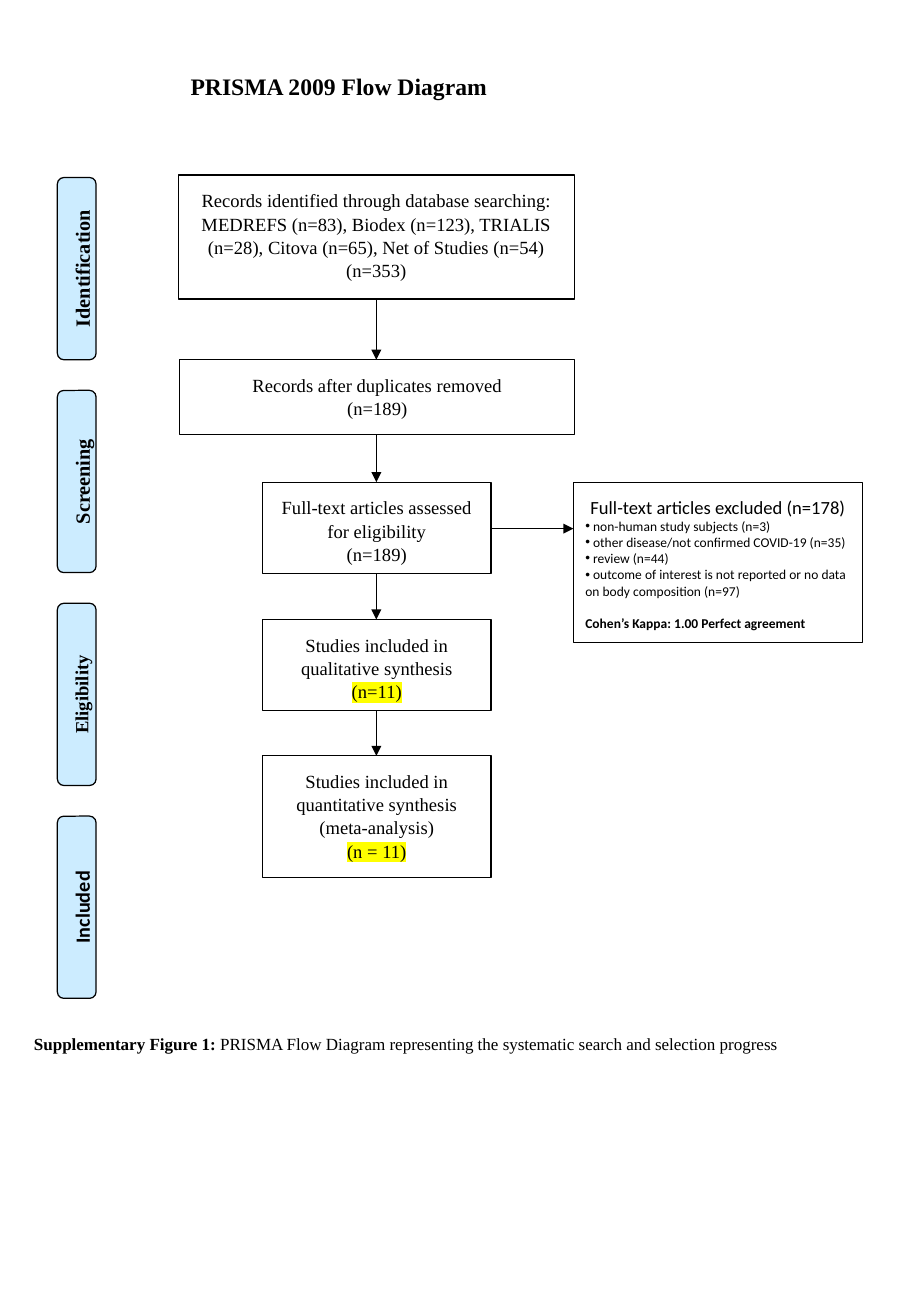
import pptx
import pptx.util
import pptx.dml.color
import pptx.enum.shapes
import pptx.enum.text
import pptx.oxml.ns
import lxml.etree

Cm = pptx.util.Cm
Pt = pptx.util.Pt
SHAPES = pptx.enum.shapes.MSO_SHAPE
ALIGN = pptx.enum.text.PP_ALIGN
qn = pptx.oxml.ns.qn
SERIF = "Times New Roman"
SANS = "Calibri"


def color(hex_string):
    return pptx.dml.color.RGBColor.from_string(hex_string)


def style(para, size, name=SERIF, bold=False, align=ALIGN.CENTER):
    para.alignment = align
    para.font.size = Pt(size)
    para.font.name = name
    para.font.bold = bold
    para.font.color.rgb = color("000000")


deck = pptx.Presentation()
deck.slide_width, deck.slide_height = Cm(19.05), Cm(27.51)
slide = deck.slides.add_slide(deck.slide_layouts[1])
title, excluded = slide.placeholders

# Title
title.left, title.top, title.width, title.height = Cm(3.73), Cm(1.35), Cm(7), Cm(0.9)
title.text_frame.auto_size = pptx.enum.text.MSO_AUTO_SIZE.NONE
title.text_frame.text = "PRISMA 2009 Flow Diagram"
style(title.text_frame.paragraphs[0], 14, bold=True, align=ALIGN.LEFT)

# Phase labels: text, size, font
phases = [
    ("Identification", 12, SERIF),
    ("Screening", 12, SERIF),
    ("Eligibility", 11, SERIF),
    ("Included", 12, SANS),
]
for index, (text, size, name) in enumerate(phases):
    label = slide.shapes.add_shape(
        SHAPES.ROUNDED_RECTANGLE, Cm(-0.3), Cm(5.21 + 4.45 * index), Cm(3.81), Cm(0.81))
    label.rotation = 270
    label.shadow.inherit = False
    label.fill.solid()
    label.fill.fore_color.rgb = color("CCECFF")
    label.line.color.rgb = color("000000")
    label.line.width = Pt(0.75)
    frame = label.text_frame
    frame.vertical_anchor = pptx.enum.text.MSO_ANCHOR.TOP
    frame.margin_left = frame.margin_right = Cm(0.13)
    frame.margin_top, frame.margin_bottom = Cm(0.22), 0
    frame.text = text
    style(frame.paragraphs[0], size, name, bold=True)

# Main flow: left, top, width, height, text, count, highlighted
stages = [
    (3.73, 3.66, 8.28, 2.59,
     "Records identified through database searching: MEDREFS (n=83), Biodex (n=123), "
     "TRIALIS (n=28), Citova (n=65), Net of Studies (n=54)", "(n=353)", False),
    (3.76, 7.52, 8.26, 1.57, "Records after duplicates removed", "(n=189)", False),
    (5.49, 10.08, 4.78, 1.91, "Full-text articles assessed for eligibility", "(n=189)", False),
    (5.49, 12.95, 4.78, 1.91, "Studies included in qualitative synthesis", "(n=11)", True),
    (5.49, 15.8, 4.78, 2.54,
     "Studies included in quantitative synthesis (meta-analysis)", "(n = 11)", True),
]
for left, top, width, height, text, count, highlighted in stages:
    box = slide.shapes.add_shape(SHAPES.RECTANGLE, Cm(left), Cm(top), Cm(width), Cm(height))
    box.shadow.inherit = False
    box.fill.solid()
    box.fill.fore_color.rgb = color("FFFFFF")
    box.line.color.rgb = color("000000")
    box.line.width = Pt(0.75)
    frame = box.text_frame
    frame.vertical_anchor = pptx.enum.text.MSO_ANCHOR.TOP
    frame.margin_left = frame.margin_right = frame.margin_bottom = Cm(0.25)
    frame.margin_top = Cm(0.28)
    para = frame.paragraphs[0]
    style(para, 11)
    para.line_spacing = 1.04
    para.add_run().text = text
    para.add_line_break()
    span = para.add_run()
    span.text = count
    if highlighted:
        highlight = lxml.etree.SubElement(span.font._element, qn("a:highlight"))
        lxml.etree.SubElement(highlight, qn("a:srgbClr"), val="FFFF00")

# Exclusion box
excluded.left, excluded.top = Cm(11.99), Cm(10.08)
excluded.width, excluded.height = Cm(6.05), Cm(3.35)
excluded.fill.solid()
excluded.fill.fore_color.rgb = color("FFFFFF")
excluded.line.color.rgb = color("000000")
excluded.line.width = Pt(0.75)
frame = excluded.text_frame
frame.auto_size = pptx.enum.text.MSO_AUTO_SIZE.NONE
frame.margin_left = frame.margin_right = frame.margin_bottom = Cm(0.25)
frame.margin_top = Cm(0.28)
reasons = [
    "Full-text articles excluded (n=178)",
    " non-human study subjects (n=3)",
    " other disease/not confirmed COVID-19 (n=35)",
    " review (n=44)",
    " outcome of interest is not reported or no data on body composition (n=97)",
    "Cohen’s Kappa: 1.00 Perfect agreement",
]
frame.text = "\n".join(reasons)
last = len(reasons) - 1
for index, para in enumerate(frame.paragraphs):
    heading, agreement = index == 0, index == last
    style(para, 11 if heading else 8, SANS, bold=agreement,
          align=ALIGN.CENTER if heading else ALIGN.LEFT)
    para.space_before = Pt(9.8 if agreement else 0)
    properties = para._p.get_or_add_pPr()
    properties.set("marL", "0")
    properties.set("indent", "0")
    if heading or agreement:
        bullet = lxml.etree.Element(qn("a:buNone"))
    else:
        bullet = lxml.etree.Element(qn("a:buChar"), char="•")
    properties.find(qn("a:defRPr")).addprevious(bullet)

# Arrows between stages, then the one to the exclusion box
flow_x = 7.87
arrows = [(flow_x, upper[1] + upper[3], flow_x, lower[1])
          for upper, lower in zip(stages, stages[1:])]
arrows.append((10.27, 11.05, 11.99, 11.05))
for ends in arrows:
    arrow = slide.shapes.add_connector(
        pptx.enum.shapes.MSO_CONNECTOR.STRAIGHT, *[Cm(value) for value in ends])
    arrow.line.color.rgb = color("000000")
    arrow.line.width = Pt(0.75)
    lxml.etree.SubElement(arrow.line._get_or_add_ln(), qn("a:tailEnd"), type="triangle")
    lxml.etree.SubElement(arrow._element.spPr, qn("a:effectLst"))

# Caption
caption = slide.shapes.add_textbox(Cm(0.46), Cm(21.49), Cm(18.2), Cm(0.69))
caption.text_frame.word_wrap = True
para = caption.text_frame.paragraphs[0]
style(para, 10.1, align=ALIGN.LEFT)
span = para.add_run()
span.text = "Supplementary Figure 1: "
span.font.bold = True
para.add_run().text = (
    "PRISMA Flow Diagram representing the systematic search and selection progress")

deck.save("out.pptx")
